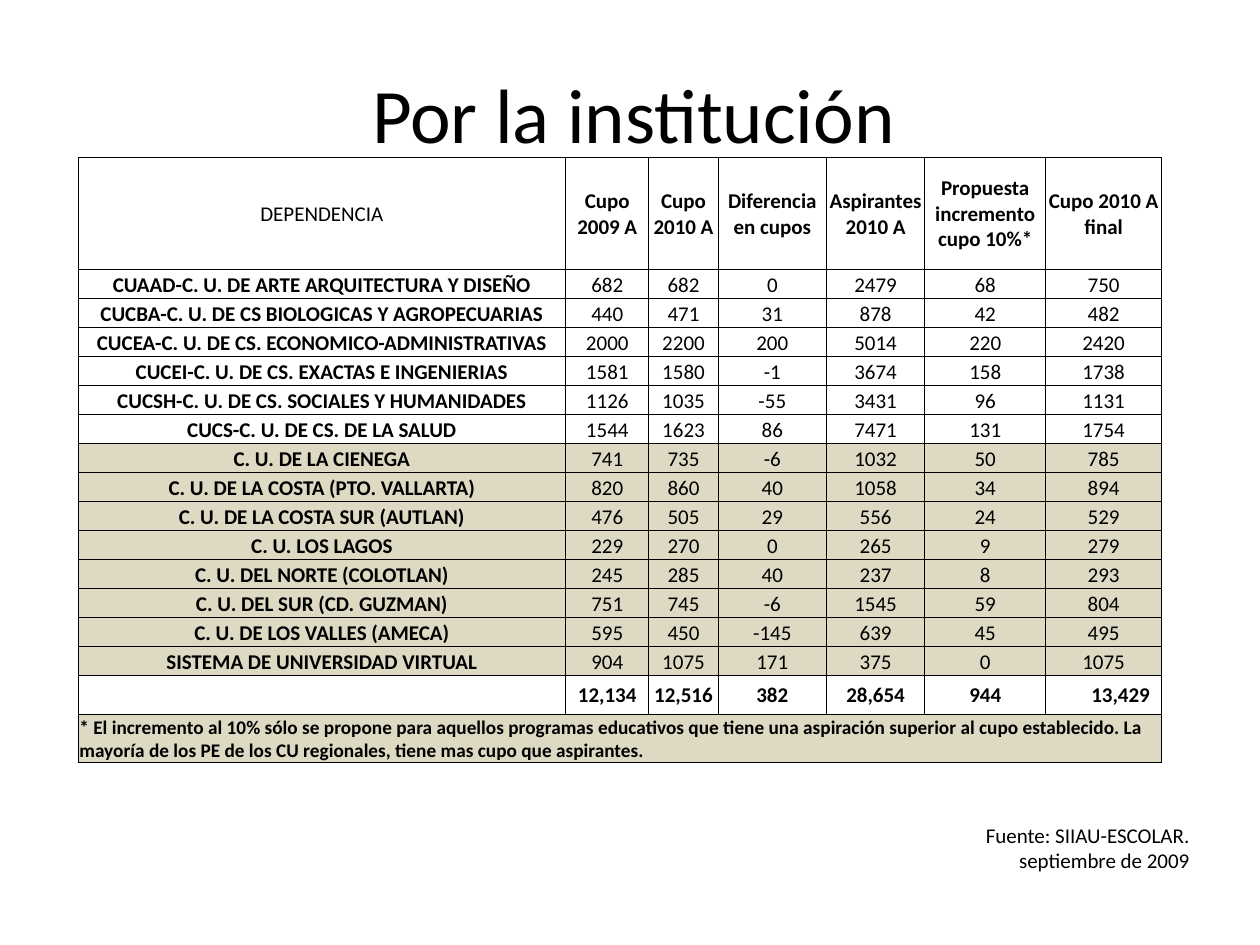
from lxml import etree
from pptx import Presentation
from pptx import util as u
from pptx.dml import color
from pptx.enum import text as t
from pptx.oxml import ns

WIDTH, HEIGHT = 10, 7.5
BLACK, SAND = "000000", "DDD9C3"
COLUMNS = [3.87, 0.66, 0.55, 0.86, 0.78, 0.96, 0.92]
HEADER_ROW, DATA_ROW, TOTAL_ROW, NOTE_ROW = 0.89, 0.23, 0.27, 0.38
CENTER, MIDDLE = t.PP_ALIGN.CENTER, t.MSO_ANCHOR.MIDDLE

HEADINGS = ["DEPENDENCIA", "Cupo 2009 A", "Cupo 2010 A", "Diferencia en cupos",
            "Aspirantes 2010 A", "Propuesta incremento cupo 10%*", "Cupo 2010 A final"]
METROPOLITAN = [
    ("CUAAD-C. U. DE ARTE ARQUITECTURA Y DISEÑO", 682, 682, 0, 2479, 68, 750),
    ("CUCBA-C. U. DE CS BIOLOGICAS Y AGROPECUARIAS", 440, 471, 31, 878, 42, 482),
    ("CUCEA-C. U. DE CS. ECONOMICO-ADMINISTRATIVAS", 2000, 2200, 200, 5014, 220, 2420),
    ("CUCEI-C. U. DE CS. EXACTAS E INGENIERIAS", 1581, 1580, -1, 3674, 158, 1738),
    ("CUCSH-C. U. DE CS. SOCIALES Y HUMANIDADES", 1126, 1035, -55, 3431, 96, 1131),
    ("CUCS-C. U. DE CS. DE LA SALUD", 1544, 1623, 86, 7471, 131, 1754),
]
REGIONAL = [
    ("C. U. DE LA CIENEGA", 741, 735, -6, 1032, 50, 785),
    ("C. U. DE LA COSTA (PTO. VALLARTA)", 820, 860, 40, 1058, 34, 894),
    ("C. U. DE LA COSTA SUR (AUTLAN)", 476, 505, 29, 556, 24, 529),
    ("C. U. LOS LAGOS", 229, 270, 0, 265, 9, 279),
    ("C. U. DEL NORTE (COLOTLAN)", 245, 285, 40, 237, 8, 293),
    ("C. U. DEL SUR (CD. GUZMAN)", 751, 745, -6, 1545, 59, 804),
    ("C. U. DE LOS VALLES (AMECA)", 595, 450, -145, 639, 45, 495),
    ("SISTEMA DE UNIVERSIDAD VIRTUAL", 904, 1075, 171, 375, 0, 1075),
]
TOTALS = ["", "12,134", "12,516", "382", "28,654", "944", "13,429"]
NOTE = ("* El incremento al 10% sólo se propone para aquellos programas educativos que "
        "tiene una aspiración superior al cupo establecido. La mayoría de los PE de los "
        "CU regionales, tiene mas cupo que aspirantes.")


def rgb(code):
    return color.RGBColor.from_string(code)


def write(paragraph, words, size, bold=False, align=CENTER):
    paragraph.alignment = align
    run = paragraph.add_run()
    run.text = words
    run.font.name = "Calibri"
    run.font.size = u.Pt(size)
    run.font.bold = bold
    run.font.color.rgb = rgb(BLACK)


def border(cell, side, width):
    edge = etree.SubElement(cell._tc.get_or_add_tcPr(), ns.qn(f"a:ln{side}"),
                            w=str(u.Pt(width)))
    paint = etree.SubElement(edge, ns.qn("a:solidFill"))
    etree.SubElement(paint, ns.qn("a:srgbClr"), val=BLACK)


def format_cell(cell, fill=None, anchor=MIDDLE, top=0.5, bottom=0.5):
    for side, width in zip("LRTB", (0.5, 0.5, top, bottom)):
        border(cell, side, width)
    if fill:
        cell.fill.solid()
        cell.fill.fore_color.rgb = rgb(fill)
    else:
        cell.fill.background()
    cell.margin_left = cell.margin_right = cell.margin_top = u.Inches(0.01)
    cell.margin_bottom = 0
    cell.vertical_anchor = anchor


def add_title(slide, box):
    title = slide.shapes.title
    title.left, title.top, title.width, title.height = map(u.Inches, box)
    title.text_frame.vertical_anchor = MIDDLE
    write(title.text_frame.paragraphs[0], "Por la institución", 44)


def add_quota_table(slide, left, top):
    centers = METROPOLITAN + REGIONAL
    heights = [HEADER_ROW] + [DATA_ROW] * len(centers) + [TOTAL_ROW, NOTE_ROW]
    frame = slide.shapes.add_table(len(heights), len(COLUMNS), u.Inches(left), u.Inches(top),
                                   u.Inches(sum(COLUMNS)), u.Inches(sum(heights)))
    quotas = frame.table
    quotas.first_row = quotas.horz_banding = False
    for column, width in zip(quotas.columns, COLUMNS):
        column.width = u.Inches(width)
    for row, height in zip(quotas.rows, heights):
        row.height = u.Inches(height)

    for c, heading in enumerate(HEADINGS):
        cell = quotas.cell(0, c)
        format_cell(cell, bottom=1 if c else 0.5)
        write(cell.text_frame.paragraphs[0], heading, 12, bold=c > 0)

    for r, center in enumerate(centers, 1):
        fill = SAND if r > len(METROPOLITAN) else None
        for c, value in enumerate(center):
            cell = quotas.cell(r, c)
            format_cell(cell, fill, t.MSO_ANCHOR.BOTTOM, top=1 if r == 1 and c else 0.5)
            write(cell.text_frame.paragraphs[0], str(value), 12, bold=c == 0)

    total_row, note_row = len(heights) - 2, len(heights) - 1
    for c, total in enumerate(TOTALS):
        cell = quotas.cell(total_row, c)
        format_cell(cell)
        write(cell.text_frame.paragraphs[0], total, 12, bold=True)
    quotas.cell(total_row, len(COLUMNS) - 1).margin_left = u.Inches(0.28)

    for c in range(len(COLUMNS)):
        format_cell(quotas.cell(note_row, c), SAND)
    note = quotas.cell(note_row, 0)
    note.merge(quotas.cell(note_row, len(COLUMNS) - 1))
    write(note.text_frame.paragraphs[0], NOTE, 11, bold=True, align=t.PP_ALIGN.LEFT)


def add_credit(slide, box):
    credit = slide.shapes.add_textbox(*map(u.Inches, box)).text_frame
    credit.word_wrap = True
    write(credit.paragraphs[0], "Fuente: SIIAU-ESCOLAR.", 12, align=t.PP_ALIGN.RIGHT)
    write(credit.add_paragraph(), "septiembre de 2009", 12, align=t.PP_ALIGN.RIGHT)


def main():
    deck = Presentation()
    deck.slide_width, deck.slide_height = u.Inches(WIDTH), u.Inches(HEIGHT)
    slide = deck.slides.add_slide(deck.slide_layouts[5])
    add_title(slide, (0.78, 0.31, 0.85 * WIDTH, 1.17))
    add_credit(slide, (6.95, 6.48, 2.59, 0.5))
    add_quota_table(slide, 0.62, 1.25)
    deck.save("out.pptx")


if __name__ == "__main__":
    main()
